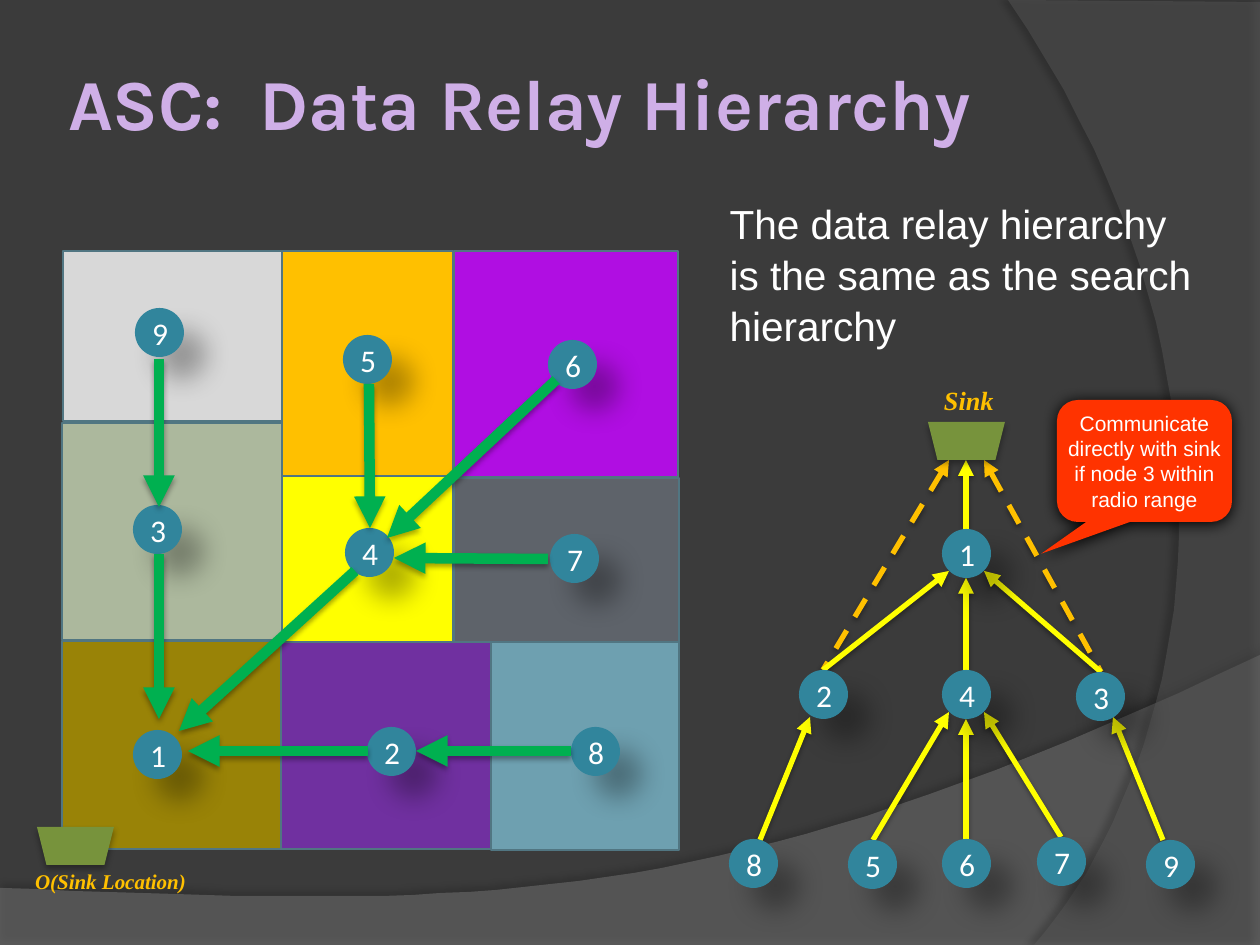
from dataclasses import dataclass
from typing import Optional

import lxml.etree
import pptx
import pptx.dml.color
import pptx.enum.dml
import pptx.enum.shapes
import pptx.enum.text
import pptx.oxml.ns
import pptx.util

RGB = pptx.dml.color.RGBColor
SHAPE = pptx.enum.shapes.MSO_SHAPE
ALIGN = pptx.enum.text.PP_ALIGN
ANCHOR = pptx.enum.text.MSO_ANCHOR
qn = pptx.oxml.ns.qn
SCALE = 914400 / 126  # EMU per px

BACKGROUND = RGB(0x3B, 0x3B, 0x3B)
WAVE = RGB(0x7F, 0x7F, 0x7F)
ARC = RGB(0x5E, 0x5E, 0x5E)
LILAC = RGB(0xCF, 0xAF, 0xE7)
WHITE = RGB(0xFF, 0xFF, 0xFF)
AMBER = RGB(0xFF, 0xC0, 0x00)
YELLOW = RGB(0xFF, 0xFF, 0x00)
GREEN = RGB(0x00, 0xB0, 0x50)
TEAL = RGB(0x31, 0x85, 0x9C)
OLIVE = RGB(0x77, 0x93, 0x3C)
RED = RGB(0xFF, 0x33, 0x00)
CELL_EDGE = RGB(0x51, 0x76, 0x82)
NODE_SIZE = 49


@dataclass(frozen=True)
class Shadow:
    alpha: int
    blur: float
    distance: float
    angle: int


@dataclass(frozen=True)
class ArrowStyle:
    color: RGB
    width: int
    end: str
    shadow: Shadow
    dashed: bool = False


@dataclass(frozen=True)
class Font:
    name: str
    size: float
    color: RGB
    bold: bool = False
    italic: bool = False


@dataclass(frozen=True)
class Cell:
    x: int
    y: int
    w: int
    h: int
    color: RGB


NODE_SHADOW = Shadow(30, 15, 18, 45)
SINK_SHADOW = Shadow(32, 3.5, 2.2, 90)
LINK_SHADOW = Shadow(38, 3.1, 1.6, 90)
TREE_LINK = ArrowStyle(YELLOW, 3, "headEnd", LINK_SHADOW)
DIRECT_LINK = ArrowStyle(AMBER, 3, "headEnd", LINK_SHADOW, dashed=True)
RELAY_LINK = ArrowStyle(GREEN, 6, "tailEnd", Shadow(35, 3.1, 1.8, 90))

NODE_FONT = Font("Calibri", 18, WHITE)
CALLOUT_FONT = Font("Arial", 12, WHITE)

# Links as x1, y1, x2, y2; nodes as label, x, y
DIRECT_LINKS = [(984, 460, 1101, 672), (949, 460, 823, 670)]
TREE_LINKS = [
    (966, 460, 966, 529), (966, 578, 966, 670), (966, 719, 966, 839),
    (949, 712, 873, 840), (810, 717, 760, 840), (1113, 717, 1163, 840),
    (984, 712, 1061, 837), (949, 571, 823, 670), (984, 571, 1101, 672),
]
TREE_NODES = [
    ("1", 942, 529), ("4", 942, 670), ("2", 799, 670), ("3", 1076, 672),
    ("8", 729, 839), ("5", 848, 840), ("6", 942, 839), ("7", 1037, 837),
    ("9", 1146, 840),
]
CELLS = [
    Cell(62, 641, 219, 208, RGB(0x99, 0x83, 0x07)),
    Cell(62, 423, 220, 217, RGB(0xAC, 0xB8, 0x9D)),
    Cell(63, 251, 219, 170, RGB(0xD8, 0xD8, 0xD8)),
    Cell(282, 251, 171, 226, AMBER),
    Cell(454, 251, 224, 226, RGB(0xB0, 0x0E, 0xE2)),
    Cell(281, 642, 210, 207, RGB(0x70, 0x30, 0xA0)),
    Cell(282, 476, 171, 166, YELLOW),
    Cell(491, 642, 188, 208, RGB(0x6E, 0xA0, 0xB0)),
    Cell(454, 478, 225, 164, RGB(0x5E, 0x63, 0x6A)),
]
GRID_NODES = [
    ("1", 133, 730), ("2", 367, 727), ("8", 571, 727), ("6", 548, 340),
    ("7", 550, 534), ("3", 133, 505), ("9", 135, 308), ("5", 343, 335),
    ("4", 345, 528),
]
GRID_LINKS = [
    (159, 554, 159, 719), (355, 571, 179, 731), (571, 751, 416, 751),
    (368, 751, 188, 751), (548, 559, 394, 558), (556, 380, 387, 538),
    (159, 359, 159, 507), (369, 384, 370, 528),
]


def px(n: float) -> int:
    return round(n * SCALE)


def set_effects(shape, shadow: Optional[Shadow]) -> None:
    effects = lxml.etree.SubElement(shape.element.spPr, qn("a:effectLst"))
    if shadow:
        outer = lxml.etree.SubElement(
            effects, qn("a:outerShdw"), blurRad=str(pptx.util.Pt(shadow.blur)),
            dist=str(pptx.util.Pt(shadow.distance)),
            dir=str(shadow.angle * 60000), algn="ctr", rotWithShape="0")
        color = lxml.etree.SubElement(outer, qn("a:srgbClr"), val="000000")
        lxml.etree.SubElement(color, qn("a:alpha"), val=str(shadow.alpha * 1000))


def add_run(p, text: str, font: Font) -> None:
    r = p.add_run()
    r.text = text
    r.font.name, r.font.size = font.name, pptx.util.Pt(font.size)
    r.font.bold, r.font.italic = font.bold, font.italic
    r.font.color.rgb = font.color


def set_insets(tf, x: int, y: int) -> None:
    tf.margin_left = tf.margin_right = px(x)
    tf.margin_top = tf.margin_bottom = px(y)


def add_box(s, kind, x, y, w, h, color: RGB, shadow=None, edge=None):
    sp = s.shapes.add_shape(kind, px(x), px(y), px(w), px(h))
    sp.fill.solid()
    sp.fill.fore_color.rgb = color
    if edge:
        sp.line.color.rgb, sp.line.width = edge, pptx.util.Pt(1.5)
    else:
        sp.line.fill.background()
    set_effects(sp, shadow)
    return sp


def add_label(sp, text: str, font: Font, inset_x: int, inset_y: int) -> None:
    tf = sp.text_frame
    tf.word_wrap, tf.vertical_anchor = True, ANCHOR.MIDDLE
    set_insets(tf, inset_x, inset_y)
    tf.paragraphs[0].alignment = ALIGN.CENTER
    add_run(tf.paragraphs[0], text, font)


def add_node(s, label: str, x: int, y: int) -> None:
    sp = add_box(s, SHAPE.FLOWCHART_CONNECTOR, x, y, NODE_SIZE, NODE_SIZE, TEAL, NODE_SHADOW)
    add_label(sp, label, NODE_FONT, 10, 5)


def add_arrow(s, x1: int, y1: int, x2: int, y2: int, style: ArrowStyle) -> None:
    line = s.shapes.add_connector(
        pptx.enum.shapes.MSO_CONNECTOR.STRAIGHT, px(x1), px(y1), px(x2), px(y2))
    line.line.color.rgb, line.line.width = style.color, pptx.util.Pt(style.width)
    if style.dashed:
        line.line.dash_style = pptx.enum.dml.MSO_LINE.DASH
    lxml.etree.SubElement(line.element.spPr.find(qn("a:ln")), qn("a:" + style.end), type="triangle")
    set_effects(line, style.shadow)


def add_sink(s, x: int, y: int) -> None:
    sp = add_box(s, SHAPE.TRAPEZOID, x, y, 77, 38, OLIVE, SINK_SHADOW)
    sp.element.spPr.find(qn("a:xfrm")).set("flipV", "1")


def add_caption(s, x: int, y: int, w: int, h: int, text: str, size: int, inset: int) -> None:
    tf = s.shapes.add_textbox(px(x), px(y), px(w), px(h)).text_frame
    tf.word_wrap = False
    set_insets(tf, inset, 5)
    add_run(tf.paragraphs[0], text, Font("Times New Roman", size, AMBER, True, True))


def bezier(*points, steps: int = 40) -> list:
    weights = [((1 - t) ** 3, 3 * t * (1 - t) ** 2, 3 * t * t * (1 - t), t ** 3)
               for t in (i / steps for i in range(steps + 1))]
    return [tuple(round(sum(w * p[axis] for w, p in zip(ws, points)), 2) for axis in (0, 1))
            for ws in weights]


def add_backdrop(s, points: list, color: RGB, alpha: int, shadow: Shadow) -> None:
    builder = s.shapes.build_freeform(*points[0], scale=SCALE)
    builder.add_line_segments(points[1:], close=True)
    sp = builder.convert_to_shape()
    sp.fill.solid()
    sp.fill.fore_color.rgb = color
    fill = sp.element.spPr.find(qn("a:solidFill"))
    lxml.etree.SubElement(fill[0], qn("a:alpha"), val=str(alpha * 1000))
    sp.line.fill.background()
    set_effects(sp, shadow)


def place(sp, x: int, y: int, w: int, h: int):
    sp.left, sp.top, sp.width, sp.height = px(x), px(y), px(w), px(h)
    tf = sp.text_frame
    tf.word_wrap, tf.auto_size = True, pptx.enum.text.MSO_AUTO_SIZE.NONE
    tf.paragraphs[0].alignment = ALIGN.LEFT
    return tf


def main() -> None:
    prs = pptx.Presentation()
    prs.slide_width, prs.slide_height = px(1260), px(945)
    s = prs.slides.add_slide(prs.slide_layouts[1])
    title, body = s.placeholders
    s.background.fill.solid()
    s.background.fill.fore_color.rgb = BACKGROUND

    # Backdrop curves
    wave = bezier((1260, 655), (704, 919), (493, 906), (0, 888))
    add_backdrop(s, [(0, 945), (1260, 945)] + wave, WAVE, 45, Shadow(35, 4, 3.5, 270))
    arc = bezier((1034, 945), (1178, 780), (1283, 402), (1008, 0))
    add_backdrop(s, [(1260, 2), (1260, 945)] + arc, ARC, 40, Shadow(45, 4, 4, 180))

    # Title and body, kept in front of the backdrop
    for sp in (title, body):
        s.shapes.element.append(sp.element)
    tf = place(title, 62, 37, 1029, 130)
    tf.vertical_anchor = ANCHOR.MIDDLE
    set_insets(tf, 6, 6)
    add_run(tf.paragraphs[0], "ASC:  Data Relay Hierarchy", Font("Karla", 41, LILAC, True))
    p = place(body, 712, 190, 504, 174).paragraphs[0]
    p.line_spacing, p.space_before = 1.05, pptx.util.Pt(0)
    pPr = p._p.get_or_add_pPr()
    pPr.set("marL", str(px(5)))
    pPr.set("indent", "0")
    lxml.etree.SubElement(pPr, qn("a:buNone"))
    add_run(p, "The data relay hierarchy is the same as the search hierarchy",
            Font("Arial", 23.2, WHITE))

    # Relay tree
    for link in DIRECT_LINKS:
        add_arrow(s, *link, DIRECT_LINK)
    for link in TREE_LINKS:
        add_arrow(s, *link, TREE_LINK)
    for node in TREE_NODES:
        add_node(s, *node)
    add_sink(s, 928, 422)
    add_caption(s, 935, 379, 69, 42, "Sink", 15, 9)
    add_caption(s, 25, 864, 173, 35, "O(Sink Location)", 12, 10)

    # Sensor field
    for c in CELLS:
        sp = add_box(s, SHAPE.ROUND_1_RECTANGLE, c.x, c.y, c.w, c.h, c.color, edge=CELL_EDGE)
        sp.adjustments[0] = 0
    for node in GRID_NODES:
        add_node(s, *node)
    for link in GRID_LINKS:
        add_arrow(s, *link, RELAY_LINK)
    add_sink(s, 37, 827)

    # Callout
    sp = add_box(s, SHAPE.ROUNDED_RECTANGULAR_CALLOUT, 1057, 400, 175, 122, RED,
                 Shadow(100, 8.5, 1, 90))
    for i, value in enumerate((-0.59, 0.76, 0.17)):
        sp.adjustments[i] = value
    add_label(sp, "Communicate directly with sink if node 3 within radio range", CALLOUT_FONT, 0, 6)
    prs.save("out.pptx")


if __name__ == "__main__":
    main()
